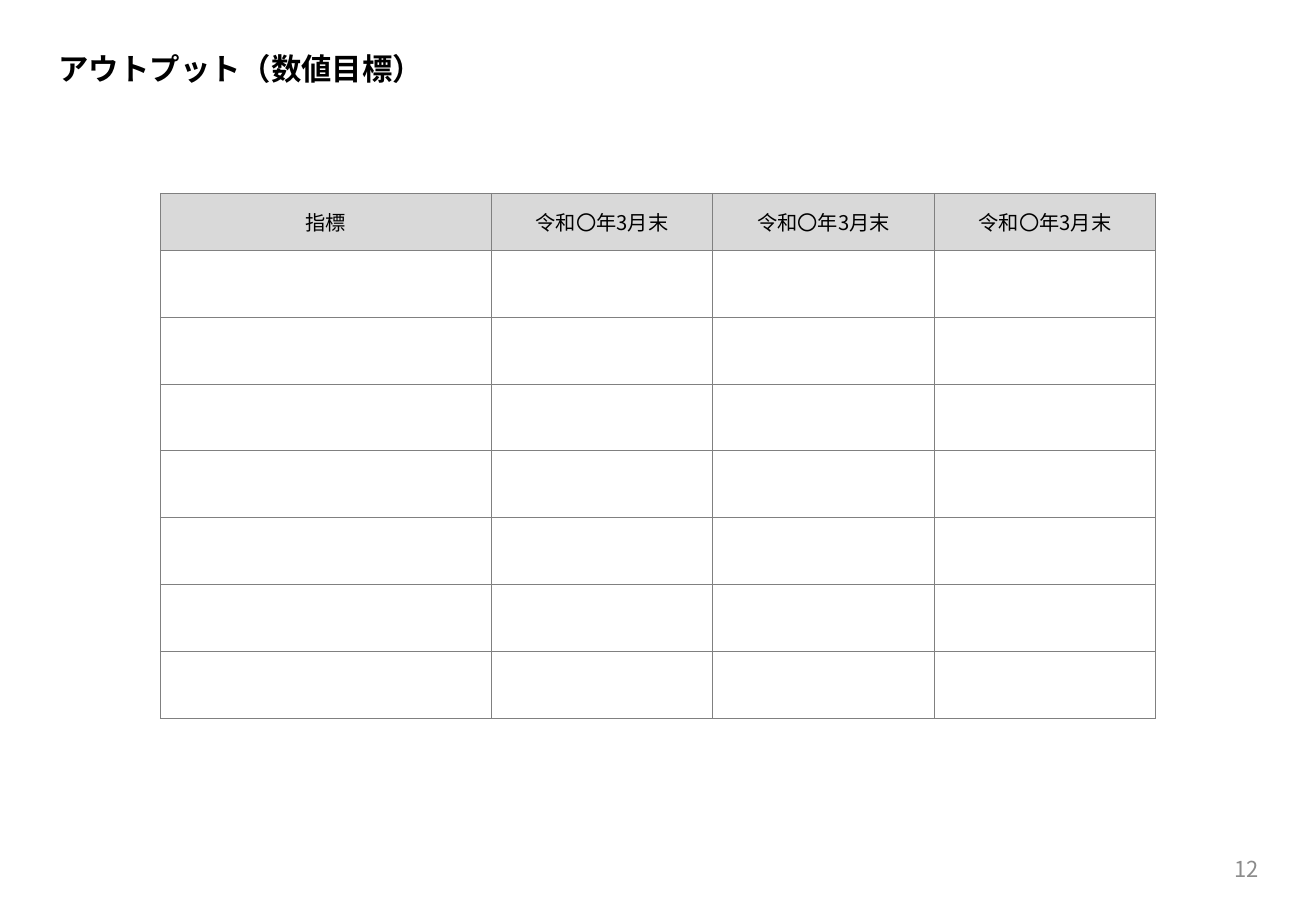
import dataclasses

import lxml.etree
import pptx
import pptx.dml.color
import pptx.enum.text
import pptx.oxml.ns
import pptx.util

Cm = pptx.util.Cm
Pt = pptx.util.Pt
ALIGN = pptx.enum.text.PP_ALIGN
MIDDLE = pptx.enum.text.MSO_ANCHOR.MIDDLE
qn = pptx.oxml.ns.qn


@dataclasses.dataclass(frozen=True)
class Theme:
    """Font, colours and type sizes of the slide."""
    font: str = "Noto Sans CJK JP"
    text: str = "000000"
    page_text: str = "8C8C8C"
    header_fill: str = "D9D9D9"
    border: str = "808080"
    border_width: float = 0.5
    title_size: int = 18
    header_size: int = 12
    page_size: int = 13


THEME = Theme()
HEADERS = ["指標"] + ["令和〇年3月末"] * 3
COLUMN_WIDTHS = [6.92] + [4.63] * 3
ROW_HEIGHTS = [1.19] + [1.4] * 7


def set_format(target, values):
    """Set each attribute of the target from a dict of format values."""
    for name, value in values.items():
        setattr(target, name, value)


def write_text(text_frame, text, size, color, alignment, bold=False):
    """Write one formatted paragraph into a text frame."""
    paragraph = text_frame.paragraphs[0]
    paragraph.alignment = alignment
    run = paragraph.add_run()
    run.text = text
    set_format(run.font, {"size": Pt(size), "bold": bold, "name": THEME.font})
    run.font.color.rgb = pptx.dml.color.RGBColor.from_string(color)
    properties = run.font._element
    lxml.etree.SubElement(properties, qn("a:ea"), typeface=THEME.font)


def place(shape, left, top, width, height):
    """Move and size a text shape and fix its frame."""
    set_format(shape, {"left": Cm(left), "top": Cm(top),
                       "width": Cm(width), "height": Cm(height)})
    set_format(shape.text_frame, {
        "word_wrap": True, "vertical_anchor": MIDDLE,
        "auto_size": pptx.enum.text.MSO_AUTO_SIZE.NONE})


def add_title(slide, text):
    """Fill the title placeholder."""
    title = slide.shapes.title
    place(title, 0.97, 0.91, 10.62, 1.02)
    write_text(title.text_frame, text, THEME.title_size, THEME.text, ALIGN.LEFT, True)


def add_page_number(slide, text):
    """Add the page number at the lower right."""
    box = slide.shapes.add_textbox(0, 0, 0, 0)
    place(box, 20.14, 17.65, 6.43, 1.02)
    write_text(box.text_frame, text, THEME.page_size, THEME.page_text, ALIGN.RIGHT)


def set_borders(cell):
    """Draw a thin line on all four sides of a cell."""
    properties = cell._tc.get_or_add_tcPr()
    for side in ("a:lnL", "a:lnR", "a:lnT", "a:lnB"):
        line = lxml.etree.SubElement(properties, qn(side), w=str(Pt(THEME.border_width)))
        fill = lxml.etree.SubElement(line, qn("a:solidFill"))
        lxml.etree.SubElement(fill, qn("a:srgbClr"), val=THEME.border)


def add_target_table(slide):
    """Add the table of targets with a header row and empty body rows."""
    table = slide.shapes.add_table(
        len(ROW_HEIGHTS), len(COLUMN_WIDTHS), Cm(3.35), Cm(4.04),
        Cm(sum(COLUMN_WIDTHS)), Cm(sum(ROW_HEIGHTS))).table
    set_format(table, {"first_row": False, "horz_banding": False})
    for column, width in zip(table.columns, COLUMN_WIDTHS):
        column.width = Cm(width)
    for row, height in zip(table.rows, ROW_HEIGHTS):
        row.height = Cm(height)
    for cell in table.iter_cells():
        set_borders(cell)
        cell.fill.background()
    for cell, text in zip(table.rows[0].cells, HEADERS):
        cell.vertical_anchor = MIDDLE
        cell.fill.solid()
        cell.fill.fore_color.rgb = pptx.dml.color.RGBColor.from_string(THEME.header_fill)
        write_text(cell.text_frame, text, THEME.header_size, THEME.text, ALIGN.CENTER)


def main():
    """Build the slide and save it."""
    presentation = pptx.Presentation()
    set_format(presentation, {"slide_width": Cm(27.51), "slide_height": Cm(19.05)})
    slide = presentation.slides.add_slide(presentation.slide_layouts[5])
    add_title(slide, "アウトプット（数値目標）")
    add_target_table(slide)
    add_page_number(slide, "12")
    presentation.save("out.pptx")


if __name__ == "__main__":
    main()
